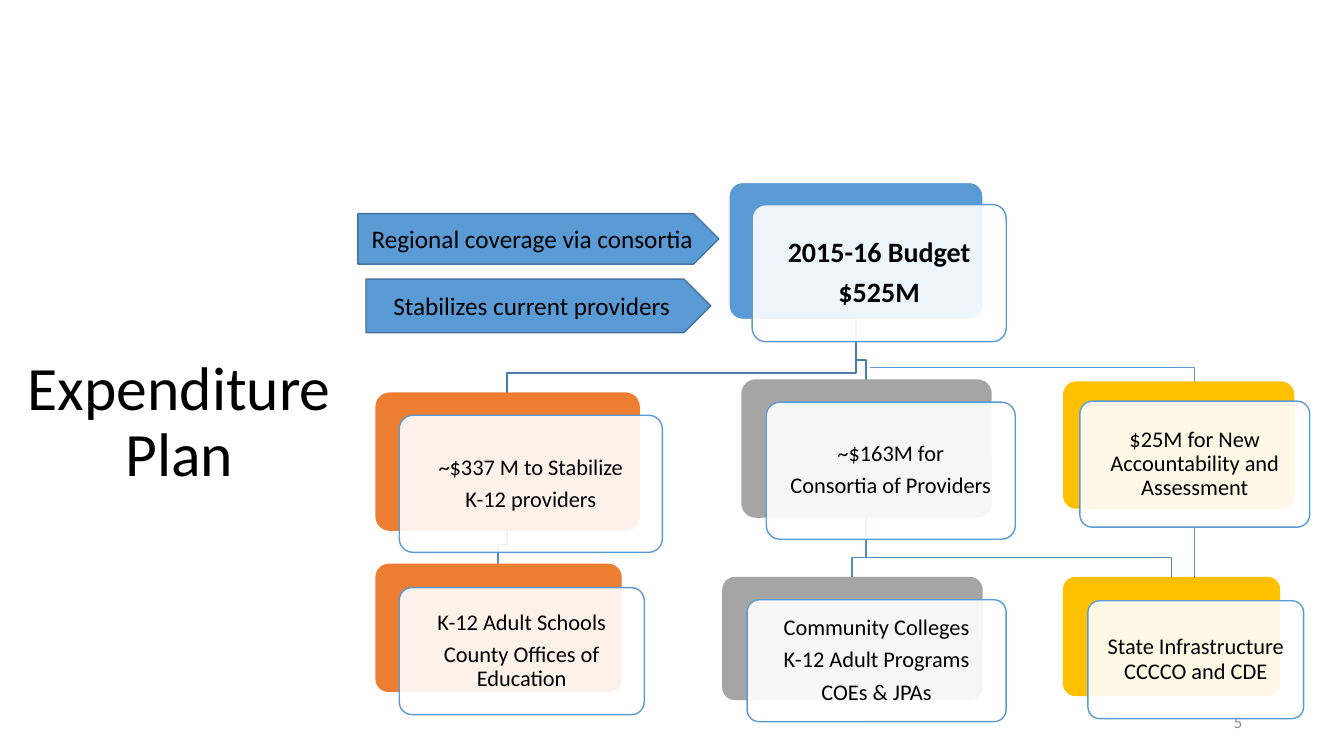
from pptx import Presentation
from pptx.dml.color import RGBColor
from pptx.enum.shapes import MSO_CONNECTOR, MSO_SHAPE
from pptx.enum.text import MSO_ANCHOR, PP_ALIGN
from pptx.oxml.ns import qn
from pptx.util import Pt
from lxml import etree

PX = 9144  # 100 px to the inch
ROUND, PENTAGON = MSO_SHAPE.ROUNDED_RECTANGLE, MSO_SHAPE.PENTAGON
STRAIGHT = MSO_CONNECTOR.STRAIGHT
MIDDLE = MSO_ANCHOR.MIDDLE
CENTER, RIGHT = PP_ALIGN.CENTER, PP_ALIGN.RIGHT
BLUE, ORANGE, GRAY, GOLD = "5B9BD5", "ED7D31", "A5A5A5", "FFC000"
TOP_LINK, LOW_LINK = "497CAB", "538DC1"

# name: (back box, front offset, fill, outline, text, size, bold)
CARDS = {
    "budget": ((723, 181, 252, 136), (23, 22), BLUE, "FFFFFF",
               ["2015-16 Budget", "$525M"], 20, True),
    "stabilize": ((373, 390, 261, 136), (23, 22), ORANGE, ORANGE,
                  ["~$337 M to Stabilize", "K-12 providers"], 16, False),
    "schools": ((373, 560, 243, 126), (23, 23), ORANGE, ORANGE,
                ["K-12 Adult Schools", "County Offices of Education"], 16, False),
    "consortia": ((736, 377, 247, 136), (24, 22), GRAY, GRAY,
                  ["~$163M for", "Consortia of Providers"], 16, False),
    "colleges": ((717, 573, 257, 121), (24, 22), GRAY, GRAY,
                 ["Community Colleges", "K-12 Adult Programs", "COEs & JPAs"], 16, False),
    "state": ((1055, 573, 214, 117), (24, 23), GOLD, GOLD,
              ["State Infrastructure CCCCO and CDE"], 16, False),
    "assessment": ((1055, 379, 228, 125), (16, 19), GOLD, GOLD,
                   ["$25M for New Accountability and Assessment"], 16, False),
}
LINKS = [
    ("consortia", "state", LOW_LINK), ("consortia", "colleges", LOW_LINK),
    ("budget", "consortia", TOP_LINK), ("stabilize", "schools", LOW_LINK),
    ("budget", "stabilize", TOP_LINK),
]
ARROWS = [
    ((363, 277, 342, 53), "Stabilizes current providers"),
    ((355, 212, 358, 50), "Regional coverage via consortia"),
]


def rgb(color):
    return RGBColor.from_string(color)


def emu(*lengths):
    return [n * PX for n in lengths]


def write(sp, lines, size, color="000000", inset=10, align=CENTER, bold=False, **spacing):
    tf = sp.text_frame
    tf.word_wrap = True
    tf.vertical_anchor = MIDDLE
    for side in ("left", "right", "top", "bottom"):
        setattr(tf, "margin_" + side, inset * PX)
    for i, line in enumerate(lines):
        p = tf.add_paragraph() if i else tf.paragraphs[0]
        p.alignment = align
        for key, value in spacing.items():
            setattr(p, key, value)
        r = p.add_run()
        r.text = line
        for key, value in {"name": "Calibri", "size": Pt(size), "bold": bold}.items():
            setattr(r.font, key, value)
        r.font.color.rgb = rgb(color)


def text(s, box, lines, size, **style):
    write(s.shapes.add_textbox(*emu(*box)), lines, size, **style)


def shape(s, kind, box, fill, line):
    sp = s.shapes.add_shape(kind, *emu(*box))
    sp.shadow.inherit = False
    sp.fill.solid()
    sp.fill.fore_color.rgb = rgb(fill)
    sp.line.color.rgb = rgb(line)
    sp.line.width = Pt(1)
    return sp


def card(s, box, offset, fill, outline, lines, size, bold):
    """Coloured back panel with a translucent text panel shifted over it."""
    x, y, w, h = box
    back = shape(s, ROUND, box, fill, outline)
    front = shape(s, ROUND, (x + offset[0], y + offset[1], w, h), "FFFFFF", BLUE)
    for sp in (back, front):
        sp.adjustments[0] = 0.1
    color = front.fill._xPr.find(qn("a:solidFill"))[0]
    etree.SubElement(color, qn("a:alpha"), val="90000")
    write(front, lines, size, inset=11, bold=bold,
          line_spacing=0.9, space_after=Pt(0.35 * size))
    return front


def elbow(s, parent, child, color):
    """Bent link from the parent's bottom middle to the child's top middle."""
    (px, py, pw, ph), (cx, cy, cw, _) = parent, child
    x1, x2, bend = px + pw // 2, cx + cw // 2, cy - 20
    fb = s.shapes.build_freeform(x1, py + ph, scale=PX)
    fb.add_line_segments([(x1, bend), (x2, bend), (x2, cy)], close=False)
    sp = fb.convert_to_shape()
    sp.shadow.inherit = False
    sp.fill.background()
    sp.line.color.rgb = rgb(color)
    sp.line.width = Pt(1)


def straight(s, x1, y1, x2, y2):
    line = s.shapes.add_connector(STRAIGHT, *emu(x1, y1, x2, y2))
    line.line.color.rgb = rgb(BLUE)
    line.line.width = Pt(0.5)
    etree.SubElement(line._element.spPr, qn("a:effectLst"))
    return line


def chart(s):
    # Links lie behind the cards
    for parent, child, color in LINKS:
        elbow(s, CARDS[parent][0], CARDS[child][0], color)
    fronts = {name: card(s, *parts) for name, parts in CARDS.items()}

    # Arrows pointing at the budget
    for box, label in ARROWS:
        write(shape(s, PENTAGON, box, BLUE, "43739E"), [label], 18)

    # Thin lines around the assessment card
    x = 1185
    straight(s, x, 523, x, 573).begin_connect(fronts["assessment"], 2)
    straight(s, x, 364, 863, 364)
    straight(s, x, 364, x, 379)


def main():
    prs = Presentation()
    prs.slide_width, prs.slide_height = emu(1333, 750)
    s = prs.slides.add_slide(prs.slide_layouts[6])
    text(s, (968, 701, 274, 30), ["5"], 12, color="898989", align=RIGHT)
    text(s, (16, 321, 324, 198), ["Expenditure Plan"], 44, line_spacing=0.9)
    chart(s)
    prs.save("out.pptx")


if __name__ == "__main__":
    main()
